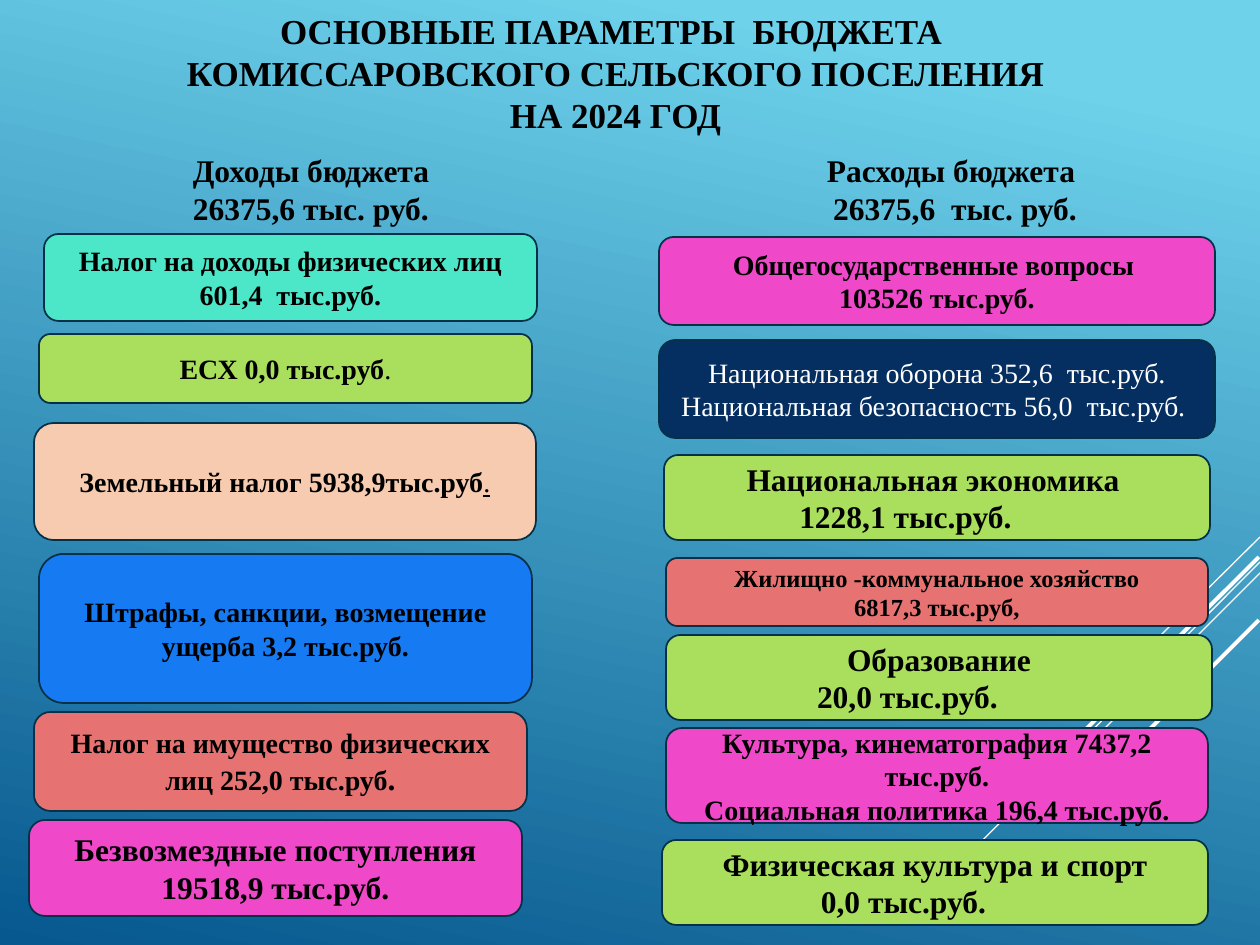
from pptx import Presentation
from pptx import util as u
from pptx.dml import color
from pptx.enum import shapes, text
from pptx.oxml import ns
from lxml import etree

PX = u.Inches(1) / 126
COLORS = {
    "sky": "6ED2EB", "deep": "06588E", "outline": "043148",
    "white": "FFFFFF", "black": "000000", "mint": "4BE7C8",
    "green": "AADF5E", "peach": "F6CBAF", "blue": "167BF3",
    "coral": "E67272", "pink": "EF48C9", "navy": "052F61",
}


def px(*lengths):
    return [u.Emu(round(length * PX)) for length in lengths]


def write(box, content, size, ink="black", bold=True):
    frame = box.text_frame
    frame.word_wrap = True
    frame.text = content
    for para in frame.paragraphs:
        para.alignment = text.PP_ALIGN.CENTER
        for span in para.runs:
            span.font.name = "Times New Roman"
            span.font.size = u.Pt(size)
            span.font.bold = bold
            span.font.color.rgb = color.RGBColor.from_string(COLORS[ink])
    return frame


deck = Presentation()
deck.slide_width, deck.slide_height = px(1260, 945)
page = deck.slides.add_slide(deck.slide_layouts[6])

# Background gradient
backdrop = page.background.fill
backdrop.gradient()
backdrop.gradient_angle = 258
for stop, (position, name) in zip(backdrop.gradient_stops, [(0.1, "sky"), (1, "deep")]):
    stop.position = position
    stop.color.rgb = color.RGBColor.from_string(COLORS[name])

# Diagonal stripes: start x, y, end x, y, width in points
stripes = [
    (1260, 537, 1155, 641, 0.75),
    (1260, 562, 920, 903, 0.75),
    (1260, 573, 1043, 790, 0.75),
    (1259, 557, 1060, 755, 2.25),
    (1259, 620, 1115, 764, 2.25),
]
for *ends, width in stripes:
    stripe = page.shapes.add_connector(shapes.MSO_CONNECTOR.STRAIGHT, *px(*ends))
    stripe.line.color.rgb = color.RGBColor.from_string(COLORS["white"])
    stripe.line.width = u.Pt(width)
    etree.SubElement(stripe.element.spPr, ns.qn("a:effectLst"))

# Title
title = page.shapes.add_textbox(*px(59, 16, 1113, 112))
frame = write(title, "ОСНОВНЫЕ ПАРАМЕТРЫ  БЮДЖЕТА \v КОМИССАРОВСКОГО СЕЛЬСКОГО "
              "ПОСЕЛЕНИЯ \vНА 2024 ГОД", 20)
frame.vertical_anchor = text.MSO_ANCHOR.MIDDLE

# Column headings
headings = [
    (39, 552, "Доходы бюджета \n26375,6 тыс. руб. "),
    (699, 512, "Расходы бюджета \n26375,6  тыс. руб."),
]
for left, width, content in headings:
    write(page.shapes.add_textbox(*px(left, 145, width, 89)), content, 18)

# Budget items: left, top, width, height, fill, text size, text
incomes = [
    (44, 234, 493, 87, "mint", 16, "Налог на доходы физических лиц 601,4  тыс.руб."),
    (39, 334, 493, 69, "green", 16, "ЕСХ 0,0 тыс.руб"),
    (34, 423, 502, 117, "peach", 16, "Земельный налог 5938,9тыс.руб"),
    (39, 554, 493, 149, "blue", 16, "Штрафы, санкции, возмещение ущерба 3,2 тыс.руб."),
    (34, 712, 493, 99, "coral", 16, "Налог на имущество физических лиц 252,0 тыс.руб"),
    (29, 820, 493, 96, "pink", 18, "Безвозмездные поступления\n19518,9 тыс.руб."),
]
expenses = [
    (659, 237, 556, 88, "pink", 16, "Общегосударственные вопросы \n103526 тыс.руб."),
    (659, 340, 556, 98, "navy", 16, "Национальная оборона 352,6  тыс.руб.\n"
     "Национальная безопасность 56,0  тыс.руб. "),
    (664, 455, 546, 85, "green", 18, "Национальная экономика \n1228,1 тыс.руб."),
    (666, 558, 542, 68, "coral", 14, "Жилищно -коммунальное хозяйство\n6817,3 тыс.руб,"),
    (666, 635, 546, 85, "green", 18, "Образование\n20,0 тыс.руб."),
    (666, 728, 542, 95, "pink", 16, "Культура, кинематография 7437,2 тыс.руб.\n"
     "Социальная политика 196,4 тыс.руб."),
    (662, 840, 546, 85, "green", 18, "Физическая культура и спорт\n0,0 тыс.руб."),
]
# Closing full stops with their own format: size, bold, underline
full_stops = {
    "ЕСХ": (16, False, False),
    "Земельный": (16, False, True),
    "Налог на имущество": (18, True, False),
}
for *place, fill, size, content in incomes + expenses:
    box = page.shapes.add_shape(shapes.MSO_SHAPE.ROUNDED_RECTANGLE, *px(*place))
    box.shadow.inherit = False
    box.fill.solid()
    box.fill.fore_color.rgb = color.RGBColor.from_string(COLORS[fill])
    box.line.color.rgb = color.RGBColor.from_string(COLORS["outline"])
    box.line.width = u.Pt(1)
    dark = fill == "navy"
    frame = write(box, content, size, "white" if dark else "black", not dark)
    frame.vertical_anchor = text.MSO_ANCHOR.MIDDLE

    # Amounts in the large green boxes sit left of centre
    if fill == "green" and size == 18:
        amount = frame.paragraphs[1]
        amount._p.get_or_add_pPr().set("marR", str(px(63)[0]))

    for opening, (stop_size, bold, underline) in full_stops.items():
        if content.startswith(opening):
            span = frame.paragraphs[0].add_run()
            span.text = "."
            span.font.name = "Times New Roman"
            span.font.size = u.Pt(stop_size)
            span.font.bold = bold
            span.font.underline = underline
            span.font.color.rgb = color.RGBColor.from_string(COLORS["black"])

deck.save("out.pptx")
